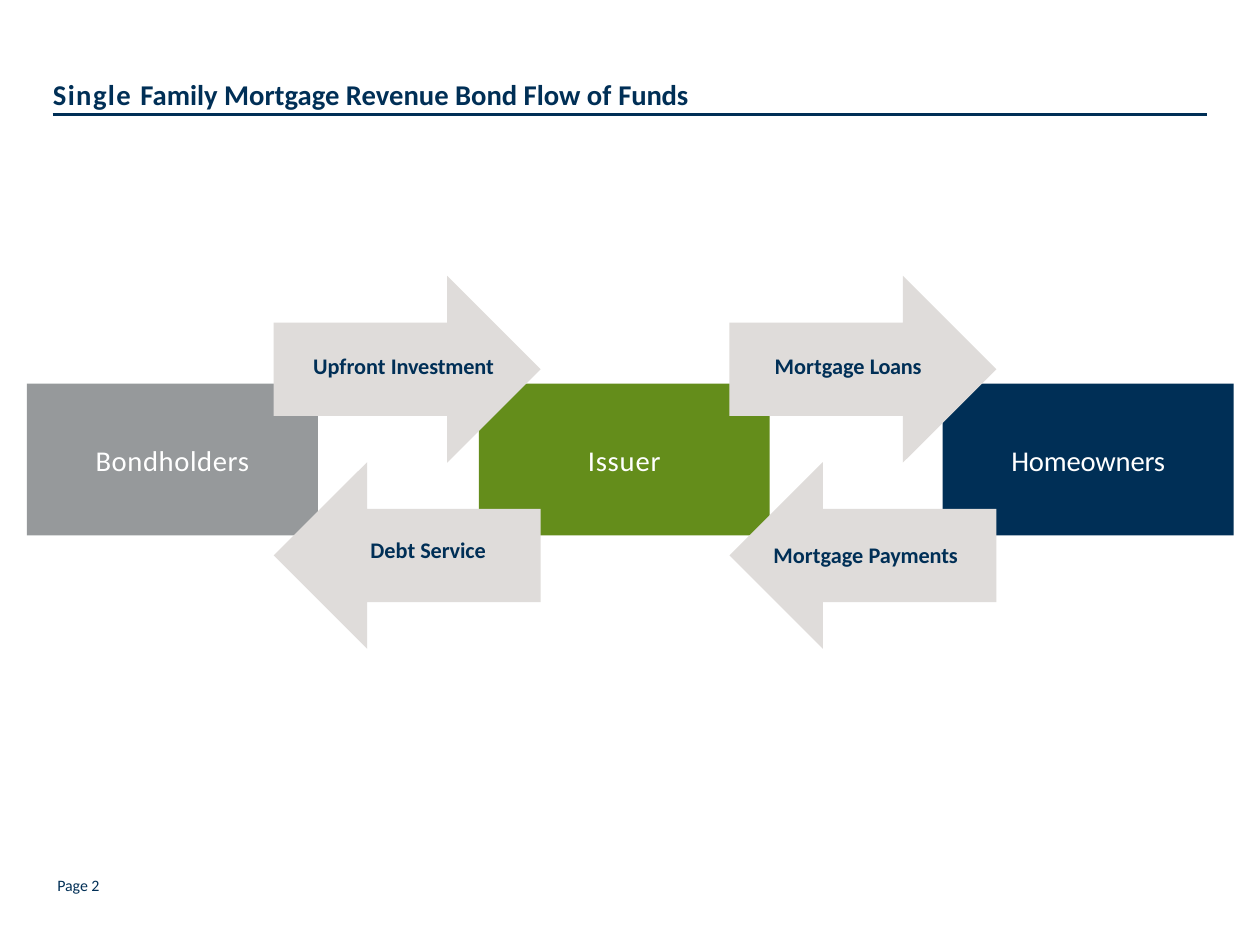
import pptx
import pptx.dml.color
import pptx.enum.shapes
import pptx.enum.text
import pptx.util
from lxml import etree

NAVY, GREY, GREEN, SAND, WHITE = "002F56", "96999B", "648D1B", "DFDCDA", "FFFFFF"
SHAPE = pptx.enum.shapes.MSO_SHAPE
Pt = pptx.util.Pt

prs = pptx.Presentation()
prs.slide_width = pptx.util.Inches(11)
prs.slide_height = pptx.util.Inches(8.28)
s = prs.slides.add_slide(prs.slide_layouts[6])


def place(x, y, w, h):
    """Turn percentages of the slide's width and height into lengths."""
    across, down = prs.slide_width / 100, prs.slide_height / 100
    return int(x * across), int(y * down), int(w * across), int(h * down)


def write(tf, runs, size, color, bold=False):
    """Fill a frame with one paragraph of (text, letter spacing in points) runs."""
    tf.margin_left = tf.margin_right = tf.margin_top = tf.margin_bottom = 0
    tf.word_wrap = True
    p = tf.paragraphs[0]
    p.font.name, p.font.size, p.font.bold = "Calibri", Pt(size), bold
    p.font.color.rgb = pptx.dml.color.RGBColor.from_string(color)
    for text, spacing in runs:
        r = p.add_run()
        r.text = text
        if spacing:
            r._r.get_or_add_rPr().set("spc", str(round(spacing * 100)))
    return p


# Title rule
x1, y1, w, h = place(4.18, 12.08, 91.64, 0)
rule = s.shapes.add_connector(pptx.enum.shapes.MSO_CONNECTOR.STRAIGHT, x1, y1, x1 + w, y1)
rule.line.color.rgb = pptx.dml.color.RGBColor.from_string(NAVY)
rule.line.width = Pt(2.25)
etree.SubElement(rule._element.spPr, pptx.oxml.ns.qn("a:effectLst"))

# Parties, then the arrows of funds between them
parties = [
    (2.14, GREY, "Bondholders", 0.4),
    (38, GREEN, "Issuer", 0.5),
    (74.82, NAVY, "Homeowners", -0.1),
]
arrow_columns = [21.73, 57.9]
arrow_rows = [(29.1, SHAPE.RIGHT_ARROW), (48.75, SHAPE.LEFT_ARROW)]

blocks = [(SHAPE.RECTANGLE, (x, 40.48, 23.09, 16), color, [(name, spacing)])
          for x, color, name, spacing in parties]
blocks += [(kind, (x, y, 21.18, 19.69), SAND, [])
           for x in arrow_columns for y, kind in arrow_rows]

for kind, area, color, runs in blocks:
    sp = s.shapes.add_shape(kind, *place(*area))
    sp.shadow.inherit = False
    sp.fill.solid()
    sp.fill.fore_color.rgb = pptx.dml.color.RGBColor.from_string(color)
    sp.line.fill.background()
    if runs:
        p = write(sp.text_frame, runs, 18, WHITE)
        p.alignment = pptx.enum.text.PP_ALIGN.CENTER
        sp.text_frame.vertical_anchor = pptx.enum.text.MSO_ANCHOR.MIDDLE

# Title, arrow labels and page number
texts = [
    (4.2, 8.15, 56, 4, 18, True,
     [("Single ", 0.9), ("Family Mortgage Revenue Bond Flow of ", 0), ("Funds", -0.1)]),
    (24.85, 37.15, 17, 3.1, 14, True, [("Upfront ", 0), ("Investment", -0.1)]),
    (29.39, 56.6, 12, 3.1, 14, True, [("Debt ", 0), ("Service", -0.1)]),
    (61.48, 37.15, 15, 3.1, 14, True, [("Mortgage ", 0), ("Loans", -0.2)]),
    (61.39, 57.08, 17, 3.1, 14, True, [("Mortgage ", 0), ("Payments", -0.1)]),
    (4.55, 92.4, 6, 2.05, 10, False, [("Page 2", 0)]),
]
for x, y, w, h, size, bold, runs in texts:
    sp = s.shapes.add_textbox(*place(x, y, w, h))
    write(sp.text_frame, runs, size, NAVY, bold)

prs.save("out.pptx")
